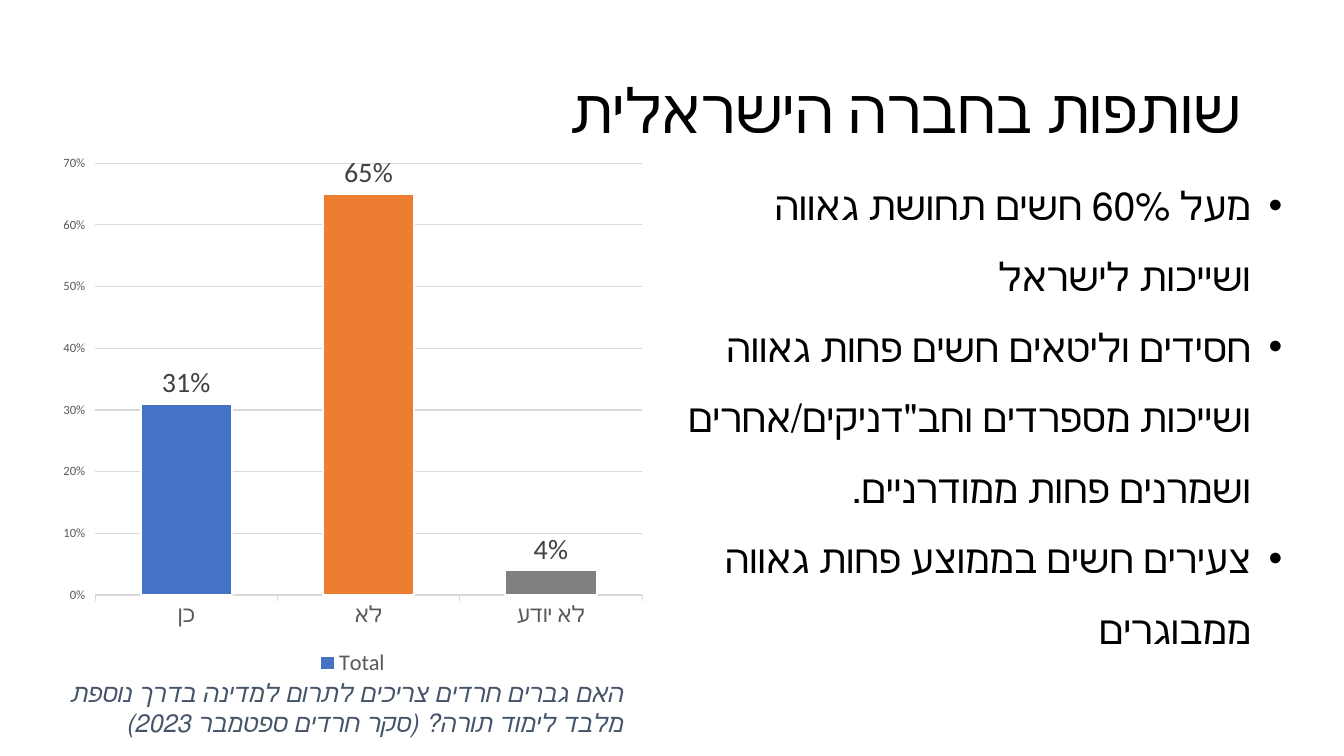
from lxml.etree import SubElement
from pptx import Presentation
from pptx.chart.data import CategoryChartData
from pptx.dml.color import RGBColor
from pptx.enum.chart import XL_CHART_TYPE, XL_LABEL_POSITION, XL_LEGEND_POSITION, XL_TICK_MARK
from pptx.enum.shapes import MSO_SHAPE
from pptx.enum.text import MSO_ANCHOR, PP_ALIGN
from pptx.oxml.ns import qn
from pptx.util import Pt

FONT = "Calibri"
BLACK = RGBColor(0x00, 0x00, 0x00)
WHITE = RGBColor(0xFF, 0xFF, 0xFF)
SLATE = RGBColor(0x44, 0x54, 0x6A)
GRID = RGBColor(0xD9, 0xD9, 0xD9)
AXIS_TEXT = RGBColor(0x59, 0x59, 0x59)
LABEL_TEXT = RGBColor(0x40, 0x40, 0x40)
BLUE = RGBColor(0x44, 0x72, 0xC4)
ORANGE = RGBColor(0xED, 0x7D, 0x31)
GRAY = RGBColor(0x80, 0x80, 0x80)

TITLE = "שותפות בחברה הישראלית"
FINDINGS = [
    "מעל 60% חשים תחושת גאווה ושייכות לישראל",
    "חסידים וליטאים חשים פחות גאווה ושייכות מספרדים וחב\"דניקים/אחרים ושמרנים פחות ממודרניים.",
    "צעירים חשים בממוצע פחות גאווה ממבוגרים",
]
QUESTION = "האם גברים חרדים צריכים לתרום למדינה בדרך נוספת מלבד לימוד תורה? (סקר חרדים ספטמבר 2023)"
ANSWERS = [("כן", 0.31, BLUE), ("לא", 0.65, ORANGE), ("לא יודע", 0.04, GRAY)]


def set_attrs(obj, **values):
    for name, value in values.items():
        setattr(obj, name, value)


def set_font(font, size, color, italic=None):
    set_attrs(font, name=FONT, size=Pt(size), italic=italic)
    font.color.rgb = color


def write_rtl(tf, texts, size, color, italic=None, bullet=False, **spacing):
    """Fill a text frame with right-to-left paragraphs."""
    tf.word_wrap = True
    for i, text in enumerate(texts):
        p = tf.paragraphs[0] if i == 0 else tf.add_paragraph()
        set_attrs(p, alignment=PP_ALIGN.RIGHT, **spacing)
        pPr = p._p.get_or_add_pPr()
        pPr.set("rtl", "1")
        if bullet:
            pPr.set("marL", str(Pt(22.5)))
            pPr.set("indent", str(-Pt(22.5)))
            SubElement(pPr, qn("a:buFont")).set("typeface", "Arial")
            SubElement(pPr, qn("a:buChar")).set("char", "•")
        r = p.add_run()
        r.text = text
        set_font(r.font, size, color, italic)


def add_text(s, box, texts, size, anchor=MSO_ANCHOR.TOP, **fmt):
    tf = s.shapes.add_textbox(*map(Pt, box)).text_frame
    tf.vertical_anchor = anchor
    write_rtl(tf, texts, size, BLACK, **fmt)


def add_caption(s, box, text):
    sp = s.shapes.add_shape(MSO_SHAPE.RECTANGLE, *map(Pt, box))
    sp.shadow.inherit = False
    sp.fill.solid()
    sp.fill.fore_color.rgb = WHITE
    sp.line.fill.background()
    tf = sp.text_frame
    set_attrs(tf, margin_left=0, margin_top=0, margin_right=0, margin_bottom=0,
              vertical_anchor=MSO_ANCHOR.TOP)
    write_rtl(tf, [text], 18, SLATE, italic=True, space_after=Pt(10))


def format_line(line, color, width):
    line.color.rgb = color
    line.width = Pt(width)


def add_answer_chart(s, box):
    data = CategoryChartData(number_format="0%")
    data.categories = [name for name, _, _ in ANSWERS]
    data.add_series("Total", [share for _, share, _ in ANSWERS])
    chart = s.shapes.add_chart(XL_CHART_TYPE.COLUMN_CLUSTERED, *map(Pt, box), data).chart
    set_attrs(chart, has_title=False, has_legend=True)
    set_font(chart.font, 10, BLACK)
    set_attrs(chart.legend, position=XL_LEGEND_POSITION.BOTTOM, include_in_layout=False)
    set_font(chart.legend.font, 16, AXIS_TEXT)

    # Axes
    cat, val = chart.category_axis, chart.value_axis
    for axis, size in ((cat, 16), (val, 9)):
        axis.major_tick_mark = XL_TICK_MARK.OUTSIDE
        set_font(axis.tick_labels.font, size, AXIS_TEXT)
    format_line(cat.format.line, GRID, 0.75)
    set_attrs(val, minimum_scale=0, maximum_scale=0.7, major_unit=0.1)
    val.format.line.fill.background()
    format_line(val.major_gridlines.format.line, GRID, 0.75)
    set_attrs(val.tick_labels, number_format="0%", number_format_is_linked=False)

    # Columns and their labels
    plot = chart.plots[0]
    set_attrs(plot, gap_width=100, vary_by_categories=False)
    series = plot.series[0]
    series.format.fill.solid()
    series.format.fill.fore_color.rgb = BLUE
    format_line(series.format.line, WHITE, 1.5)
    for i, (_, _, color) in enumerate(ANSWERS):
        column = series.points[i].format
        column.fill.solid()
        column.fill.fore_color.rgb = color
        format_line(column.line, WHITE, 1.5)
    labels = series.data_labels
    set_attrs(labels, show_value=True, number_format="0%", number_format_is_linked=False,
              position=XL_LABEL_POSITION.OUTSIDE_END)
    set_font(labels.font, 20, LABEL_TEXT)


def main():
    prs = Presentation()
    set_attrs(prs, slide_width=Pt(960), slide_height=Pt(540))
    s = prs.slides.add_slide(prs.slide_layouts[6])

    # Title
    add_text(s, (66, 28.75, 828, 104.4), [TITLE], 44, MSO_ANCHOR.MIDDLE, line_spacing=0.9)
    # Survey chart with its question
    add_answer_chart(s, (36.7, 103.7, 430.6, 383))
    add_caption(s, (24.5, 483.8, 420.5, 55.4), QUESTION)
    # Findings
    add_text(s, (481, 109.4, 442, 357), FINDINGS, 28, bullet=True, line_spacing=1.5)

    prs.save("out.pptx")


if __name__ == "__main__":
    main()
